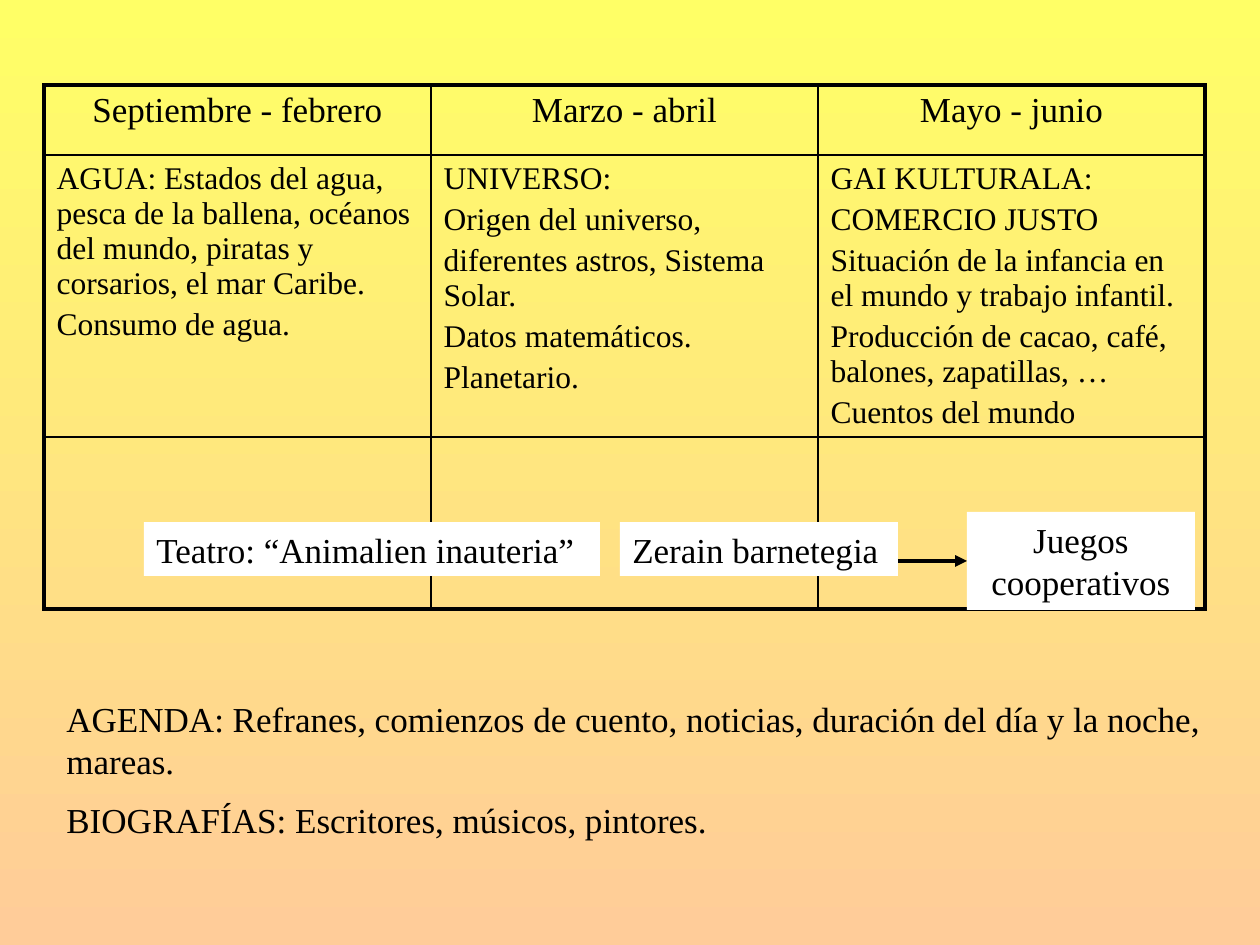
from lxml import etree
from pptx import Presentation
from pptx.dml.color import RGBColor
from pptx.enum.shapes import MSO_CONNECTOR, MSO_SHAPE
from pptx.enum.text import MSO_ANCHOR, PP_ALIGN
from pptx.oxml.ns import qn
from pptx.util import Emu, Pt

EMU_PER_PX = 914400 // 126
FONT = "Times New Roman"
BLACK, WHITE = "000000", "FFFFFF"
THIN, THICK = 1, 2.25

COLUMN_WIDTH = 387
ROW_HEIGHTS = [70, 282, 172]
HEADINGS = ["Septiembre - febrero", "Marzo - abril", "Mayo - junio"]
TOPICS = [
    ["AGUA: Estados del agua, pesca de la ballena, océanos del mundo, "
     "piratas y corsarios, el mar Caribe.",
     "Consumo de agua."],
    ["UNIVERSO:", "Origen del universo,", "diferentes astros, Sistema Solar.",
     "Datos matemáticos.", "Planetario."],
    ["GAI KULTURALA:", "COMERCIO JUSTO",
     "Situación de la infancia en el mundo y trabajo infantil.",
     "Producción de cacao, café, balones, zapatillas, …",
     "Cuentos del mundo"],
]
NOTES = [
    "AGENDA: Refranes, comienzos de cuento, noticias, duración del día y la noche, mareas.",
    "BIOGRAFÍAS: Escritores, músicos, pintores.",
]


def px(value):
    return Emu(value * EMU_PER_PX)


def color(hex_string):
    return RGBColor.from_string(hex_string)


def set_background(slide, top_color, bottom_color):
    fill = slide.background.fill
    fill.gradient()
    fill.gradient_angle = 270
    for stop, position, hex_string in zip(fill.gradient_stops, (0, 1), (top_color, bottom_color)):
        stop.position = position
        stop.color.rgb = color(hex_string)


def write_paragraphs(text_frame, lines, size, space_ratio, align=PP_ALIGN.LEFT):
    """Fill a frame; space_ratio is the gap above each paragraph relative to its size."""
    text_frame.word_wrap = True
    for index, line in enumerate(lines):
        paragraph = text_frame.paragraphs[0] if index == 0 else text_frame.add_paragraph()
        paragraph.text = line
        paragraph.alignment = align
        paragraph.space_before = Pt(size * space_ratio)
        paragraph.font.name = FONT
        paragraph.font.size = Pt(size)
        paragraph.font.color.rgb = color(BLACK)


def set_borders(cell, **widths):
    """Draw black borders, with widths in points for the sides L, R, T and B."""
    properties = cell._tc.get_or_add_tcPr()
    for side, width in widths.items():
        line = etree.SubElement(properties, qn(f"a:ln{side}"), w=str(Pt(width)))
        fill = etree.SubElement(line, qn("a:solidFill"))
        etree.SubElement(fill, qn("a:srgbClr"), val=BLACK)


def add_calendar(slide, left, top):
    rows, columns = len(ROW_HEIGHTS), len(HEADINGS)
    table = slide.shapes.add_table(
        rows, columns, px(left), px(top),
        px(columns * COLUMN_WIDTH), px(sum(ROW_HEIGHTS))).table
    table.first_row = table.horz_banding = False
    for column in table.columns:
        column.width = px(COLUMN_WIDTH)
    for row, height in zip(table.rows, ROW_HEIGHTS):
        row.height = px(height)

    for r in range(rows):
        for c in range(columns):
            cell = table.cell(r, c)
            set_borders(cell,
                        L=THICK if c == 0 else THIN,
                        R=THICK if c == columns - 1 else THIN,
                        T=THICK if r == 0 else THIN,
                        B=THICK if r == rows - 1 else THIN)
            cell.fill.background()
    for c, (heading, topics) in enumerate(zip(HEADINGS, TOPICS)):
        write_paragraphs(table.cell(0, c).text_frame, [heading], 20, 0.2, PP_ALIGN.CENTER)
        write_paragraphs(table.cell(1, c).text_frame, topics, 18, 0.2)


def add_label(slide, text, left, top, width, height, align=PP_ALIGN.LEFT):
    label = slide.shapes.add_shape(
        MSO_SHAPE.RECTANGLE, px(left), px(top), px(width), px(height))
    label.shadow.inherit = False
    label.fill.solid()
    label.fill.fore_color.rgb = color(WHITE)
    label.line.fill.background()
    label.text_frame.vertical_anchor = MSO_ANCHOR.TOP
    write_paragraphs(label.text_frame, [text], 20, 0.5, align)
    return label


def add_arrow_to(slide, target, left, y):
    """Draw a level arrow that ends at the left side of the target."""
    arrow = slide.shapes.add_connector(
        MSO_CONNECTOR.STRAIGHT, px(left), px(y), target.left, px(y))
    arrow.end_connect(target, 1)
    arrow.line.color.rgb = color(BLACK)
    arrow.line.width = Pt(2.25)
    etree.SubElement(arrow.line._get_or_add_ln(), qn("a:tailEnd"), type="triangle")
    etree.SubElement(arrow._element.spPr, qn("a:effectLst"))


def add_notes_text(slide, left, top, width, height):
    box = slide.shapes.add_textbox(px(left), px(top), px(width), px(height))
    write_paragraphs(box.text_frame, NOTES, 20, 0.5)


def main():
    presentation = Presentation()
    presentation.slide_width = px(1260)
    presentation.slide_height = px(945)
    slide = presentation.slides.add_slide(presentation.slide_layouts[6])
    set_background(slide, "FFFF66", "FFCC99")
    add_calendar(slide, 44, 85)
    add_label(slide, "Teatro: “Animalien inauteria”", 144, 522, 456, 54)
    add_label(slide, "Zerain barnetegia", 620, 522, 278, 54)
    games = add_label(slide, "Juegos cooperativos", 967, 512, 228, 98, PP_ALIGN.CENTER)
    add_arrow_to(slide, games, 898, 561)
    add_notes_text(slide, 54, 691, 1160, 160)
    presentation.save("out.pptx")


if __name__ == "__main__":
    main()
